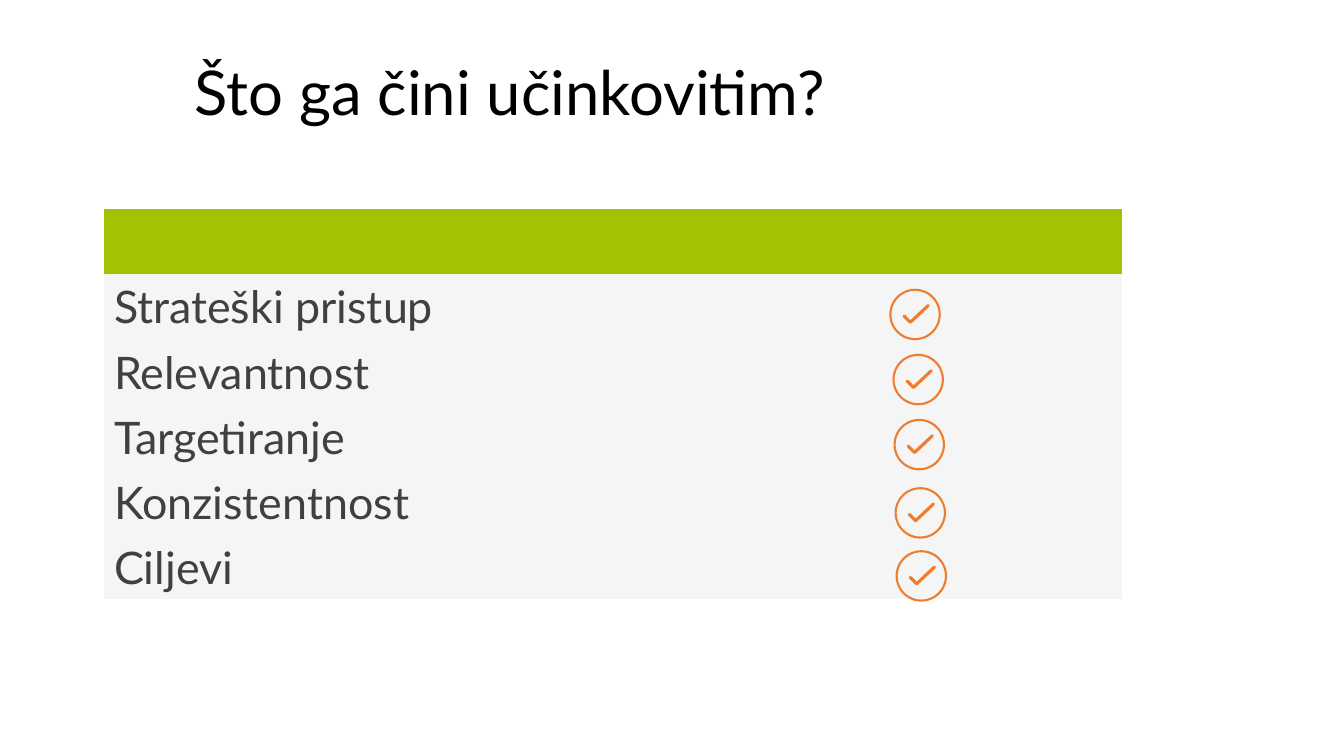
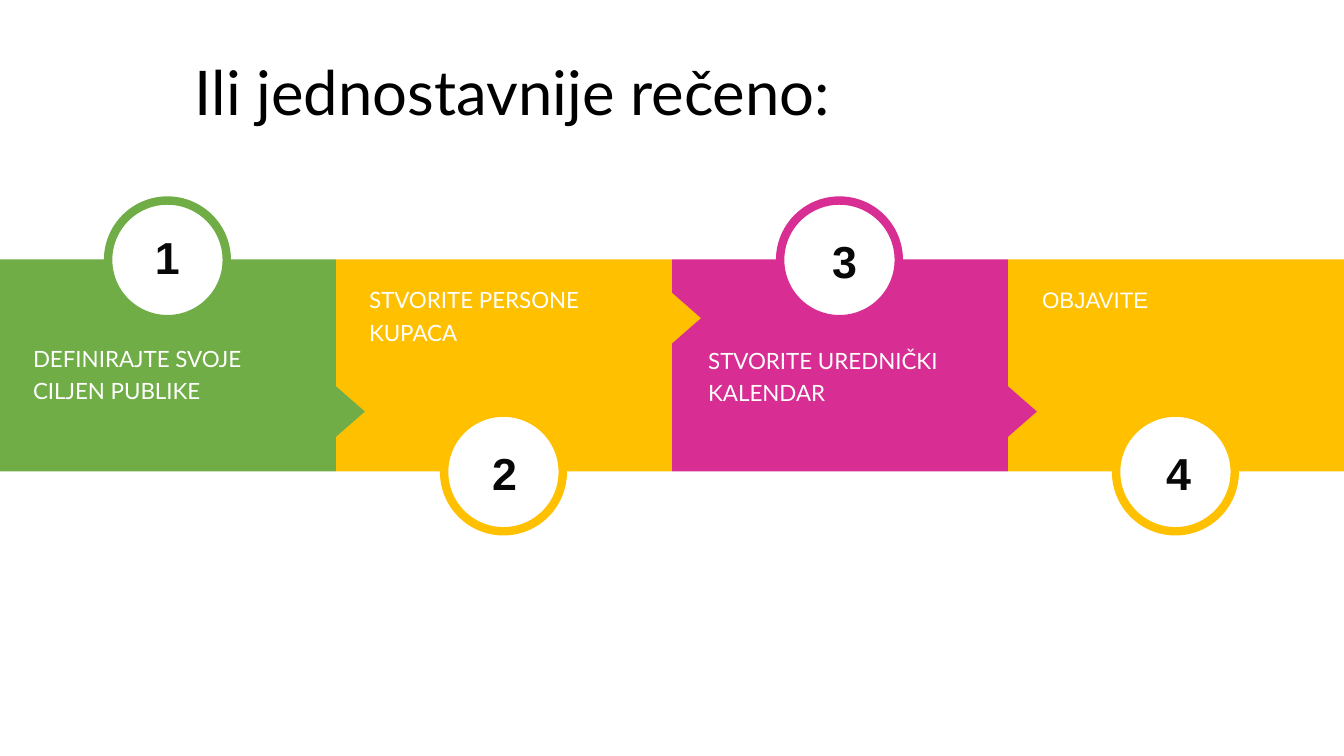
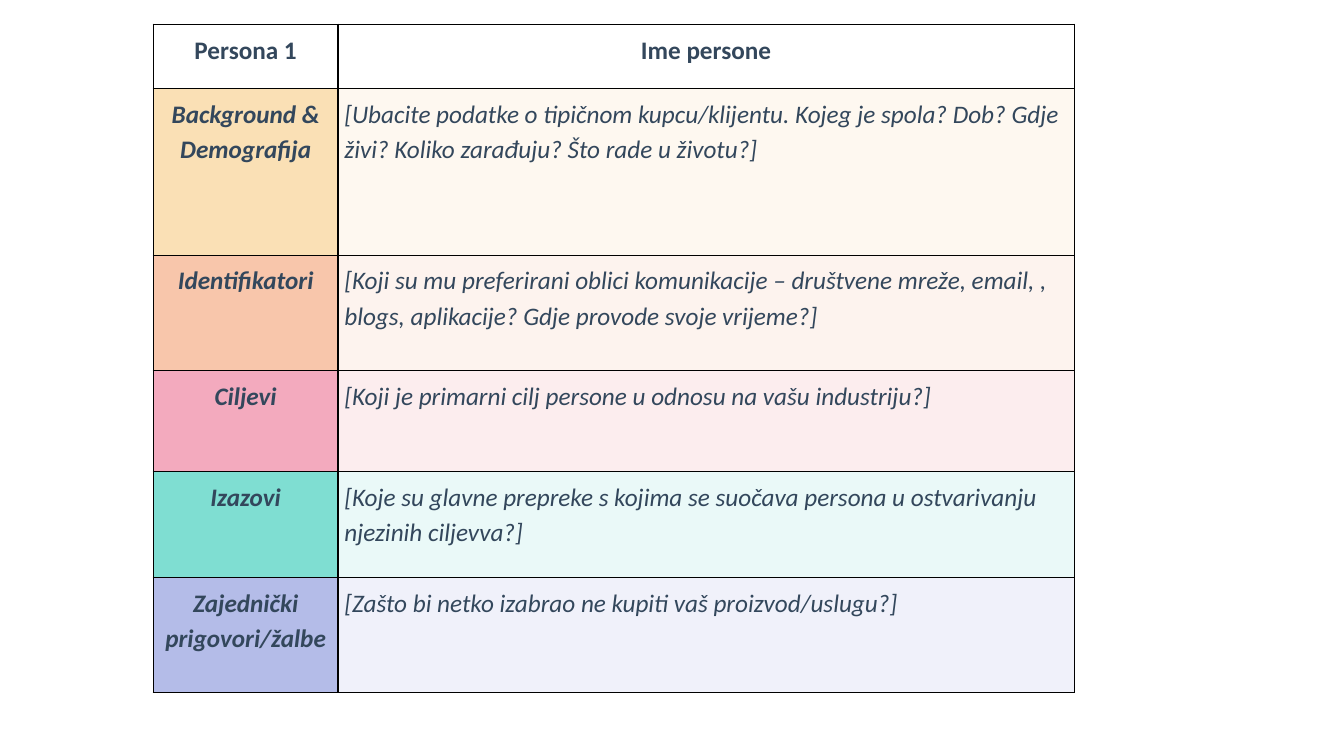
from dataclasses import dataclass

import pptx
import pptx.util
from lxml import etree
from pptx.dml.color import RGBColor
from pptx.enum.shapes import MSO_SHAPE
from pptx.enum.text import MSO_ANCHOR, PP_ALIGN
from pptx.oxml.ns import qn

PX = 9525  # EMU in one px (96 px to the inch)
SLIDE_WIDTH, SLIDE_HEIGHT = 1280, 720
PLAIN_TABLE_STYLE = "{2D5ABB26-0587-4C30-8999-92F81FD0307C}"


@dataclass(frozen=True)
class Theme:
    black: str = "000000"
    white: str = "FFFFFF"
    lime: str = "A1C302"
    pale_grey: str = "F5F5F5"
    dark_grey: str = "404040"
    orange: str = "ED7D31"
    green: str = "70AD47"
    amber: str = "FFC000"
    pink: str = "D82D93"
    number: str = "080808"
    navy: str = "33475C"
    heading_font: str = "Lato"
    number_font: str = "Arial"
    persona_font: str = "Calibri"
    title_size: int = 44
    large_size: int = 32
    persona_size: int = 18
    label_size: int = 16


THEME = Theme()

QUALITIES = ["Strateški pristup", "Relevantnost", "Targetiranje", "Konzistentnost", "Ciljevi"]
CHECK_POSITIONS = [(847, 275), (850, 337), (851, 399), (852, 464), (853, 524)]


@dataclass(frozen=True)
class Step:
    """One stage of the process; left offsets count from the panel's left side."""
    label: str
    color: str
    badge_on_top: bool
    label_at: tuple
    number_at: tuple
    arrow_y: int = 0
    font: str = THEME.heading_font


STEPS = [
    Step("DEFINIRAJTE SVOJE CILJEN PUBLIKE", THEME.green, True, (22, 319), (129, 214), 392),
    Step("STVORITE PERSONE KUPACA", THEME.amber, False, (22, 263), (130, 420), 303),
    Step("STVORITE UREDNIČKI KALENDAR", THEME.pink, True, (25, 321), (134, 218), 392),
    Step("OBJAVITE", THEME.amber, False, (23, 263), (132, 420), font=THEME.number_font),
]

# heading, prompt, row height, heading fill, prompt fill
PERSONA_ROWS = [
    ("Persona 1", "Ime persone", 61, None, None),
    ("Background & Demografija",
     "[Ubacite podatke o tipičnom kupcu/klijentu. Kojeg je spola? Dob? "
     "Gdje živi? Koliko zarađuju? Što rade u životu?]",
     159, "FAE0B5", "FEF8F0"),
    ("Identifikatori",
     "[Koji su mu preferirani oblici komunikacije – društvene mreže, email, , "
     "blogs, aplikacije? Gdje provode svoje vrijeme?]",
     110, "F8C6AB", "FDF3EE"),
    ("Ciljevi", "[Koji je primarni cilj persone u odnosu na vašu industriju?]",
     96, "F3AABE", "FCEDEE"),
    ("Izazovi",
     "[Koje su glavne prepreke s kojima se suočava persona u ostvarivanju "
     "njezinih ciljevva?]",
     101, "7FDED2", "EAF9F8"),
    ("Zajednički prigovori/žalbe", "[Zašto bi netko izabrao ne kupiti vaš proizvod/uslugu?]",
     110, "B4BCE8", "F0F1FA"),
]


def px(*lengths):
    return [length * PX for length in lengths]


def rgb(color):
    return RGBColor.from_string(color)


def write(frame, text, font, size, color, bold=False, italic=False,
          align=PP_ALIGN.LEFT, spacing=None):
    paragraph = frame.paragraphs[0]
    paragraph.text = text
    paragraph.alignment = align
    paragraph.line_spacing = spacing
    paragraph.font.name = font
    paragraph.font.size = pptx.util.Pt(size)
    paragraph.font.color.rgb = rgb(color)
    paragraph.font.bold = bold
    paragraph.font.italic = italic


def add_text(slide, box, text, font, size, color, anchor=MSO_ANCHOR.TOP, **style):
    frame = slide.shapes.add_textbox(*px(*box)).text_frame
    frame.word_wrap = True
    frame.vertical_anchor = anchor
    write(frame, text, font, size, color, **style)


def add_title(slide, text):
    add_text(slide, (176, 48, 1104, 86), text, THEME.heading_font, THEME.title_size,
             THEME.black, anchor=MSO_ANCHOR.MIDDLE, spacing=0.9)


def paint(shape, fill=None, line=None, line_width=1):
    shape.shadow.inherit = False
    if fill:
        shape.fill.solid()
        shape.fill.fore_color.rgb = rgb(fill)
    else:
        shape.fill.background()
    if line:
        shape.line.color.rgb = rgb(line)
        shape.line.width = pptx.util.Pt(line_width)
    else:
        shape.line.fill.background()


def add_shape(slide, kind, box, **look):
    shape = slide.shapes.add_shape(kind, *px(*box))
    paint(shape, **look)
    return shape


def add_check(slide, left, top):
    add_shape(slide, MSO_SHAPE.OVAL, (left + 1, top + 1, 47, 47),
              line=THEME.orange, line_width=1.5)
    outline = slide.shapes.build_freeform(left + 14, top + 26, scale=PX)
    outline.add_line_segments([(left + 20, top + 32), (left + 37, top + 16)], close=False)
    tick = outline.convert_to_shape()
    paint(tick, line=THEME.orange, line_width=2.25)
    tick.line._get_or_add_ln().set("cap", "rnd")


def add_table(slide, left, top, widths, heights):
    size = (sum(widths), sum(heights))
    table = slide.shapes.add_table(len(heights), len(widths), *px(left, top, *size)).table
    table.first_row = table.horz_banding = False
    table._tbl.tblPr.find(qn("a:tableStyleId")).text = PLAIN_TABLE_STYLE
    for column, width in zip(table.columns, px(*widths)):
        column.width = width
    for row, height in zip(table.rows, px(*heights)):
        row.height = height
    return table


def fill_cell(cell, color):
    if color:
        cell.fill.solid()
        cell.fill.fore_color.rgb = rgb(color)
    else:
        cell.fill.background()


def add_borders(cell, color):
    """Draw all four sides; call before filling, as borders precede the fill."""
    properties = cell._tc.get_or_add_tcPr()
    for side in ("lnL", "lnR", "lnT", "lnB"):
        border = etree.SubElement(properties, qn(f"a:{side}"), w=str(pptx.util.Pt(1)))
        solid = etree.SubElement(border, qn("a:solidFill"))
        etree.SubElement(solid, qn("a:srgbClr"), val=color)


def build_qualities(slide):
    table = add_table(slide, 99, 199, [576, 394], [62] * (len(QUALITIES) + 1))
    for row_index, row in enumerate(table.rows):
        for cell in row.cells:
            fill_cell(cell, THEME.pale_grey if row_index else THEME.lime)
    for row_index, quality in enumerate(QUALITIES, start=1):
        cell = table.cell(row_index, 0)
        cell.vertical_anchor = MSO_ANCHOR.MIDDLE
        write(cell.text_frame, quality, THEME.heading_font, THEME.large_size, THEME.dark_grey)
    add_title(slide, "Što ga čini učinkovitim?")
    for left, top in CHECK_POSITIONS:
        add_check(slide, left, top)


def add_step(slide, number, step):
    width = SLIDE_WIDTH // len(STEPS)
    left, top, height = (number - 1) * width, 247, 202
    badge, arrow_base, arrow_height = 113, 49, 28
    add_shape(slide, MSO_SHAPE.RECTANGLE, (left, top, width, height), fill=step.color)

    badge_y = top if step.badge_on_top else top + height
    add_shape(slide, MSO_SHAPE.OVAL,
              (left + (width - badge) // 2, badge_y - badge // 2, badge, badge),
              fill=THEME.white, line=step.color, line_width=6)
    if step.arrow_y:
        center = left + width + arrow_height // 2 - 1
        arrow = add_shape(slide, MSO_SHAPE.ISOSCELES_TRIANGLE,
                          (center - arrow_base // 2, step.arrow_y - arrow_height // 2,
                           arrow_base, arrow_height), fill=step.color)
        arrow.rotation = 90

    label_left, label_top = step.label_at
    add_text(slide, (left + label_left, label_top, 291, 69), step.label,
             step.font, THEME.label_size, THEME.white, spacing=1.2)
    number_left, number_top = step.number_at
    add_text(slide, (left + number_left, number_top, 61, 60), str(number),
             THEME.number_font, THEME.large_size, THEME.number,
             bold=True, align=PP_ALIGN.CENTER)


def build_steps(slide):
    """Place steps from last to first, so each arrow overlaps the next panel."""
    add_title(slide, "Ili jednostavnije rečeno:")
    for number in range(len(STEPS), 0, -1):
        add_step(slide, number, STEPS[number - 1])


def build_persona(slide):
    heights = [height for _, _, height, _, _ in PERSONA_ROWS]
    table = add_table(slide, 146, 23, [176, 701], heights)
    for row_index, (heading, prompt, _, *fills) in enumerate(PERSONA_ROWS):
        for column, (text, fill) in enumerate(zip((heading, prompt), fills)):
            cell = table.cell(row_index, column)
            is_heading = row_index == 0 or column == 0
            add_borders(cell, THEME.black)
            fill_cell(cell, fill)
            cell.margin_left = cell.margin_right = 6 * PX
            cell.margin_top = cell.margin_bottom = 6 * PX
            write(cell.text_frame, text, THEME.persona_font, THEME.persona_size, THEME.navy,
                  bold=is_heading, italic=row_index > 0, spacing=1.15,
                  align=PP_ALIGN.CENTER if is_heading else PP_ALIGN.LEFT)


def main():
    deck = pptx.Presentation()
    deck.slide_width, deck.slide_height = px(SLIDE_WIDTH, SLIDE_HEIGHT)
    blank = deck.slide_layouts[6]
    for build in (build_qualities, build_steps, build_persona):
        build(deck.slides.add_slide(blank))
    deck.save("out.pptx")


if __name__ == "__main__":
    main()
